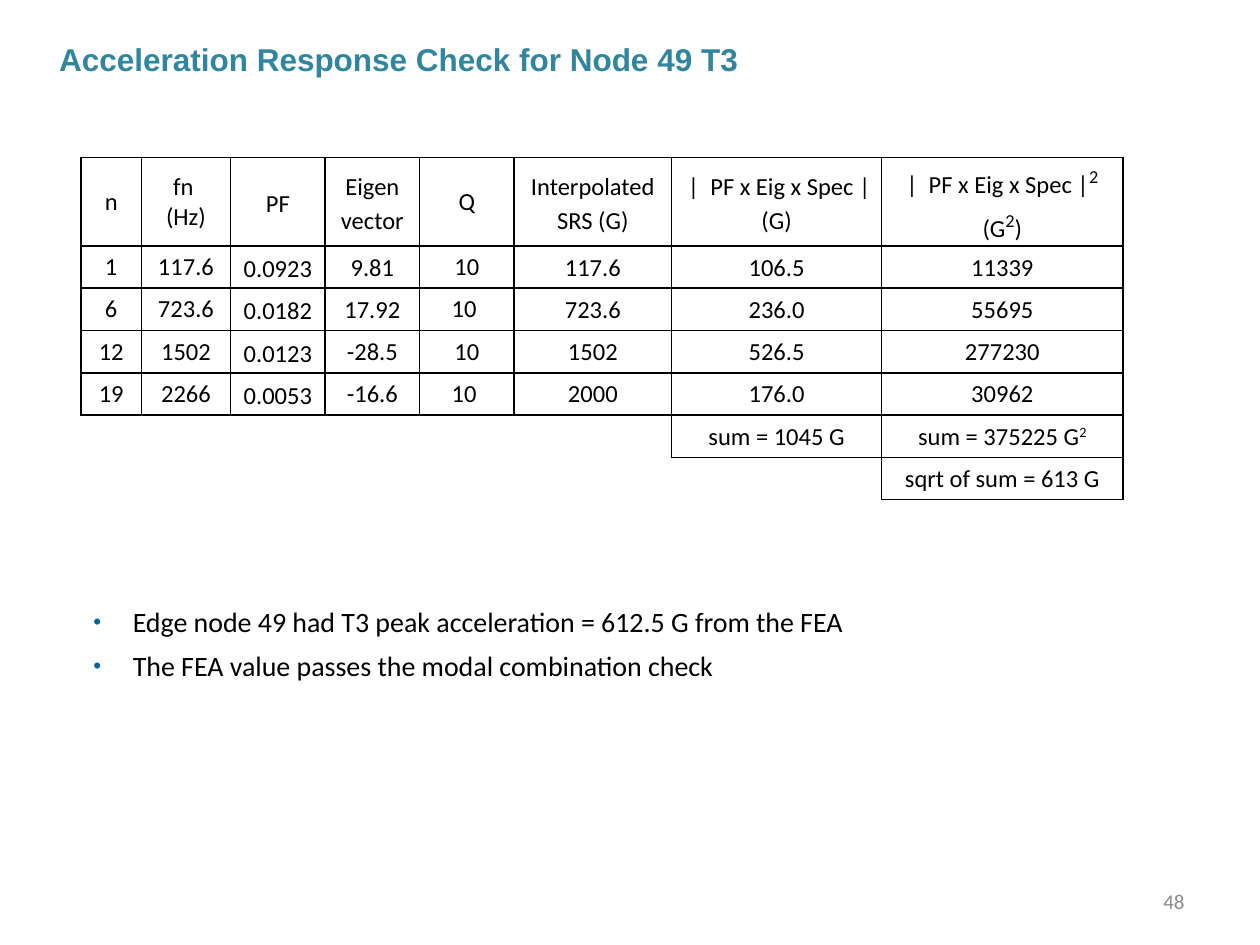
import dataclasses
import typing

import lxml.etree
import pptx
import pptx.dml.color
import pptx.enum.text
import pptx.oxml.ns
import pptx.util

Pt = pptx.util.Pt
Align = pptx.enum.text.PP_ALIGN
Anchor = pptx.enum.text.MSO_ANCHOR
RGBColor = pptx.dml.color.RGBColor

BLACK = RGBColor(0x00, 0x00, 0x00)
TEAL = RGBColor(0x31, 0x85, 0x9C)
GRAY = RGBColor(0x8C, 0x8C, 0x8C)
BULLET_BLUE = RGBColor(0x00, 0x66, 0x99)


@dataclasses.dataclass(frozen=True)
class Column:
    header: str
    width: float
    values: tuple[str, ...]
    header_spacing: float = 1.15
    value_spacing: float = 1.0
    value_inset: float = 0.7


COLUMNS = (
    Column("n", 34.5, ("1", "6", "12", "19"), 1.0, value_inset=5),
    Column("fn \n(Hz)", 51, ("117.6", "723.6", "1502", "2266"), 1.0, value_inset=5),
    Column("PF", 54, ("0.0923", "0.0182", "0.0123", "0.0053"), value_spacing=1.15, value_inset=5),
    Column("Eigen\nvector", 54, ("9.81", "17.92", "-28.5", "-16.6")),
    Column("Q", 54, ("10", "10 ", "10", "10 "), 1.0, value_inset=5),
    Column("Interpolated SRS (G)", 90, ("117.6", "723.6", "1502", "2000")),
    Column(" |  PF x Eig x Spec |\n(G)", 120, ("106.5", "236.0", "526.5", "176.0", "sum = 1045 G")),
    Column(
        "|  PF x Eig x Spec |^2^\n(G^2^)",
        138,
        ("11339", "55695", "277230", "30962", "sum = 375225 G^2^", "sqrt of sum = 613 G"),
    ),
)
ROW_HEIGHTS = (50, *[24.2] * 6)
BULLETS = (
    "Edge node 49 had T3 peak acceleration = 612.5 G from the FEA",
    "The FEA value passes the modal combination check",
)


def add_child(parent: typing.Any, tag: str, **attributes: str) -> typing.Any:
    return lxml.etree.SubElement(parent, pptx.oxml.ns.qn(tag), attributes)


def write_text(
    frame: typing.Any,
    text: str,
    *,
    size: float = 14,
    raised_size: float = 14,
    font: str = "Calibri",
    color: RGBColor = BLACK,
    bold: bool = False,
    align: Align = Align.LEFT,
    line_spacing: float = 1.0,
    before: float = 0,
    after: float = 0,
) -> None:
    frame.word_wrap = True
    for index, line in enumerate(text.split("\n")):
        para = frame.paragraphs[0] if index == 0 else frame.add_paragraph()
        para.alignment = align
        para.line_spacing = line_spacing
        para.space_before = Pt(before)
        para.space_after = Pt(after)
        for position, part in enumerate(line.split("^")):
            if not part:
                continue
            raised = position % 2 == 1
            span = para.add_run()
            span.text = part
            span.font.name = font
            span.font.size = Pt(raised_size if raised else size)
            span.font.bold = bold
            span.font.color.rgb = color
            if raised:
                span.font._element.set("baseline", "30000")


def add_text_box(page: typing.Any, left: float, top: float, width: float, height: float) -> typing.Any:
    return page.shapes.add_textbox(Pt(left), Pt(top), Pt(width), Pt(height)).text_frame


def add_bullet(para: typing.Any) -> None:
    properties = para._p.get_or_add_pPr()
    properties.set("marL", str(Pt(22.5)))
    properties.set("indent", str(-Pt(22.5)))
    color = add_child(properties, "a:buClr")
    add_child(color, "a:srgbClr", val=str(BULLET_BLUE))
    add_child(properties, "a:buSzPct", val="80000")
    add_child(properties, "a:buFont", typeface="Arial")
    add_child(properties, "a:buChar", char="•")


def is_filled(row: int, column: int) -> bool:
    return 0 <= column < len(COLUMNS) and 0 <= row <= len(COLUMNS[column].values)


def set_borders(cell: typing.Any, row: int, column: int) -> None:
    properties = cell._tc.get_or_add_tcPr()
    neighbours = {
        "a:lnL": (row, column - 1),
        "a:lnR": (row, column + 1),
        "a:lnT": (row - 1, column),
        "a:lnB": (row + 1, column),
    }
    for tag, neighbour in neighbours.items():
        border = add_child(properties, tag, w=str(Pt(1)))
        if is_filled(row, column) or is_filled(*neighbour):
            add_child(add_child(border, "a:solidFill"), "a:srgbClr", val=str(BLACK))
        else:
            add_child(border, "a:noFill")


def fill_cell(cell: typing.Any, row: int, column: int) -> None:
    layout = COLUMNS[column]
    header = row == 0
    inset = 5 if header else layout.value_inset
    cell.margin_left = cell.margin_right = Pt(inset)
    cell.margin_top = Pt(0.7 if inset < 1 else 0)
    cell.margin_bottom = Pt(0)
    cell.vertical_anchor = Anchor.MIDDLE
    set_borders(cell, row, column)
    cell.fill.background()
    if is_filled(row, column):
        write_text(
            cell.text_frame,
            layout.header if header else layout.values[row - 1],
            raised_size=18 if header else 14,
            align=Align.CENTER,
            line_spacing=layout.header_spacing if header else layout.value_spacing,
        )


def add_response_table(page: typing.Any) -> None:
    width = sum(column.width for column in COLUMNS)
    frame = page.shapes.add_table(
        len(ROW_HEIGHTS), len(COLUMNS), Pt(46.3), Pt(90), Pt(width), Pt(sum(ROW_HEIGHTS))
    )
    table = frame.table
    table.first_row = False
    table.horz_banding = False
    for index, column in enumerate(COLUMNS):
        table.columns[index].width = Pt(column.width)
    for row, height in enumerate(ROW_HEIGHTS):
        table.rows[row].height = Pt(height)
        for column in range(len(COLUMNS)):
            fill_cell(table.cell(row, column), row, column)


def add_title(page: typing.Any) -> None:
    title = page.shapes.title
    title.left, title.top, title.width, title.height = Pt(26.6), Pt(19.4), Pt(615), Pt(29)
    frame = title.text_frame
    frame.auto_size = pptx.enum.text.MSO_AUTO_SIZE.NONE
    frame.vertical_anchor = Anchor.TOP
    write_text(
        frame, "Acceleration Response Check for Node 49 T3",
        size=18, font="Arial", color=TEAL, bold=True, before=2, after=2,
    )


def main() -> None:
    deck = pptx.Presentation()
    deck.slide_width, deck.slide_height = Pt(720), Pt(540)
    page = deck.slides.add_slide(deck.slide_layouts[5])
    add_title(page)
    add_response_table(page)

    findings = add_text_box(page, 46.3, 342, 625.7, 52)
    write_text(findings, "\n".join(BULLETS), size=16, before=6)
    for para in findings.paragraphs:
        add_bullet(para)

    number = add_text_box(page, 516, 500.5, 168, 28.8)
    number.vertical_anchor = Anchor.MIDDLE
    write_text(number, "48", size=12, color=GRAY, align=Align.RIGHT)
    deck.save("out.pptx")


if __name__ == "__main__":
    main()
